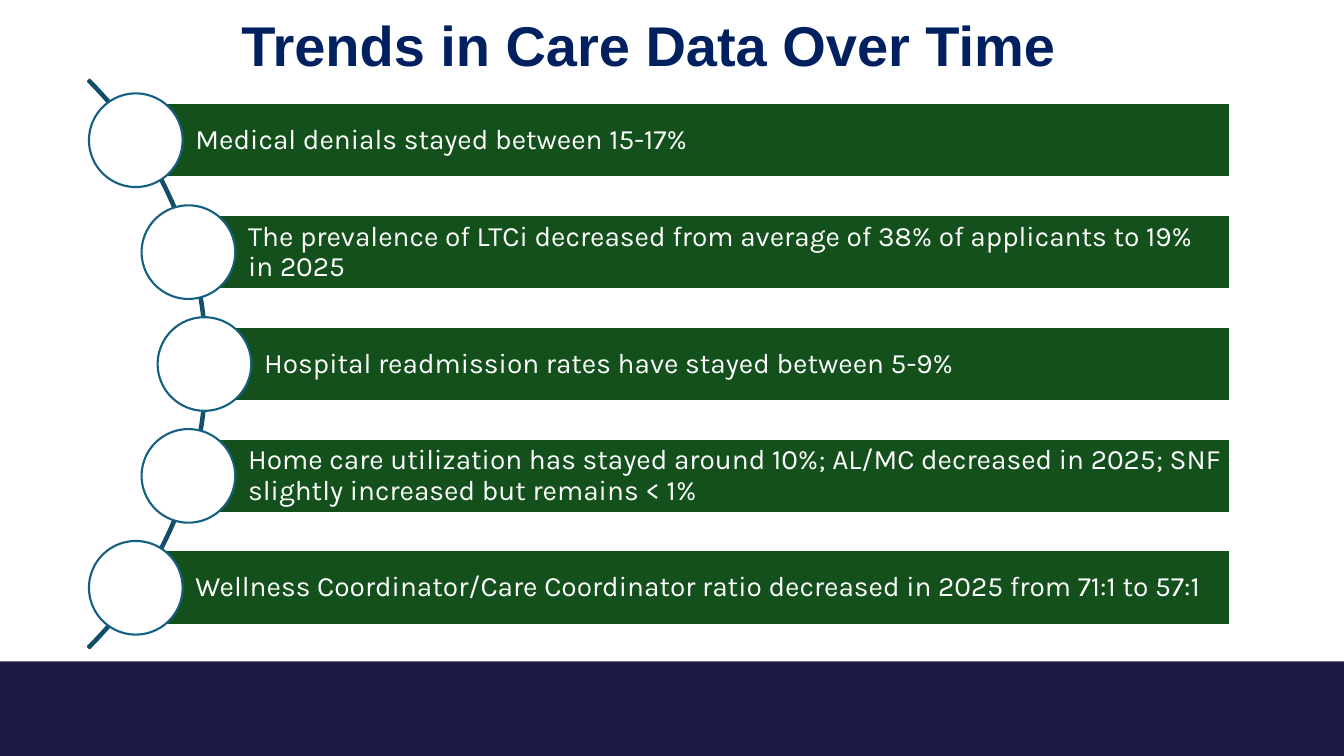
import math

import pptx
import pptx.dml.color
import pptx.enum.shapes
import pptx.enum.text
import pptx.util

RGB = pptx.dml.color.RGBColor
KIND = pptx.enum.shapes.MSO_SHAPE
ALIGN = pptx.enum.text.PP_ALIGN
WHITE = RGB(0xFF, 0xFF, 0xFF)
NAVY = RGB(0x00, 0x20, 0x60)
INDIGO = RGB(0x1C, 0x1A, 0x46)
GREEN = RGB(0x13, 0x50, 0x1B)
TEAL = RGB(0x15, 0x60, 0x82)
DEEP = RGB(0x11, 0x4D, 0x68)

WIDE, HIGH = 13.33, 7.5
CELL = 0.37
COLS, ROWS = WIDE / CELL, HIGH / CELL
HUB, MID = -5.22, 9.76
ARC, TRACK = 10.78, 10.7
PITCH, BAR, DOT = 3, 2, 2.51
EDGE = 32.97
FOOT = 17.73

TRENDS = [
    "Medical denials stayed between 15-17%",
    "The prevalence of LTCi decreased from average of 38% of applicants to 19% in 2025",
    "Hospital readmission rates have stayed between 5-9%",
    "Home care utilization has stayed around 10%; AL/MC decreased in 2025; "
    "SNF slightly increased but remains < 1%",
    "Wellness Coordinator/Care Coordinator ratio decreased in 2025 from 71:1 to 57:1",
]


def span(cells):
    """Turn grid cells into a slide length."""
    return pptx.util.Inches(cells * CELL)


def apply(item, look):
    """Set each attribute named in a dict of format values."""
    for name, value in look.items():
        setattr(item, name, value)


class Deck:
    """Hold the style and the current slide."""

    head = {"name": "Arial", "size": pptx.util.Pt(40), "bold": True}
    body = {"name": "Karla", "size": pptx.util.Pt(20), "bold": False}

    def __init__(self):
        """Open a deck with one title-only slide."""
        self.show = pptx.Presentation()
        apply(self.show, {"slide_width": pptx.util.Inches(WIDE),
                          "slide_height": pptx.util.Inches(HIGH)})
        self.slide = self.show.slides.add_slide(self.show.slide_layouts[5])

    def label(self, shape, text, font, color, align):
        """Put one formatted paragraph in a shape."""
        frame = shape.text_frame
        frame.text = text
        apply(frame, {"word_wrap": True,
                      "auto_size": pptx.enum.text.MSO_AUTO_SIZE.NONE,
                      "vertical_anchor": pptx.enum.text.MSO_ANCHOR.MIDDLE})
        para = frame.paragraphs[0]
        apply(para, {"alignment": align, "line_spacing": 0.9})
        run = para.runs[0].font
        apply(run, font)
        run.color.rgb = color

    def title(self, text, left, top, width, height):
        """Place and format the title."""
        shape = self.slide.shapes.title
        apply(shape, {"left": span(left), "top": span(top),
                      "width": span(width), "height": span(height)})
        self.label(shape, text, self.head, NAVY, ALIGN.CENTER)

    def shape(self, kind, left, top, width, height, fill=None, line=None):
        """Add a flat preset shape."""
        shape = self.slide.shapes.add_shape(
            kind, span(left), span(top), span(width), span(height))
        shape.shadow.inherit = False
        if fill is None:
            shape.fill.background()
        else:
            shape.fill.solid()
            shape.fill.fore_color.rgb = fill
        if line is None:
            shape.line.fill.background()
        else:
            shape.line.color.rgb = line
            shape.line.width = pptx.util.Pt(1.5)
        return shape

    def curve(self):
        """Draw the arc that links the dots."""
        arc = self.shape(KIND.BLOCK_ARC, HUB - ARC, MID - ARC,
                         2 * ARC, 2 * ARC, line=DEEP)
        for spot, value in enumerate((189, 27, 0.003)):
            arc.adjustments[spot] = value

    def trend(self, text, step):
        """Draw a labelled bar and its dot, a number of steps off the middle."""
        drop = step * PITCH
        left = HUB + math.sqrt(TRACK ** 2 - drop ** 2)
        mid = MID + drop
        bar = self.shape(KIND.RECTANGLE, left, mid - BAR / 2,
                         EDGE - left, BAR, GREEN, WHITE)
        pad = span(0.16)
        apply(bar.text_frame, {"margin_left": span(1.6), "margin_right": pad,
                               "margin_top": pad, "margin_bottom": pad})
        self.label(bar, text, self.body, WHITE, ALIGN.LEFT)
        self.shape(KIND.OVAL, left - DOT / 2, mid - DOT / 2,
                   DOT, DOT, WHITE, TEAL)


def main():
    """Build and save the slide."""
    deck = Deck()
    deck.shape(KIND.RECTANGLE, 0, FOOT, COLS, ROWS - FOOT, INDIGO)
    deck.title("Trends in Care Data Over Time", 1.84, -0.65, 31.08, 3.92)
    deck.curve()
    for rank, text in enumerate(TRENDS):
        deck.trend(text, rank - len(TRENDS) // 2)
    deck.show.save("out.pptx")


if __name__ == "__main__":
    main()
